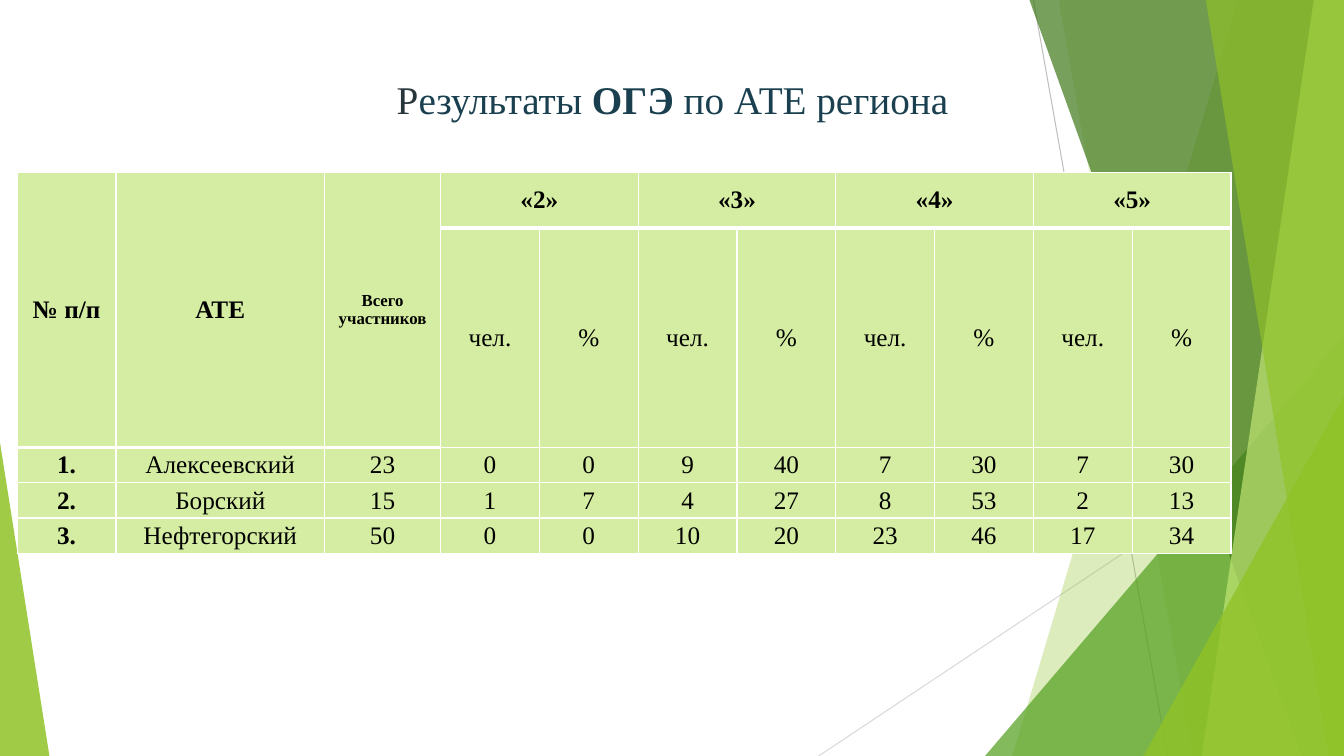
import pptx
import pptx.dml.color
import pptx.enum.shapes
import pptx.enum.text
import pptx.oxml.ns
import pptx.util
from lxml import etree

RGBColor = pptx.dml.color.RGBColor
SHAPE = pptx.enum.shapes.MSO_SHAPE
qn = pptx.oxml.ns.qn

PX = 9144  # EMU in one px, 100 px to the inch
WIDTH, HEIGHT = 1333, 750
FONT = "Times New Roman"

LIME = RGBColor(0x90, 0xC2, 0x26)
PALE_LIME = RGBColor(0xC0, 0xE4, 0x74)
GREEN = RGBColor(0x54, 0xA0, 0x21)
DARK_GREEN = RGBColor(0x3F, 0x78, 0x19)
GREY = RGBColor(0xBF, 0xBF, 0xBF)
LIGHT_GREY = RGBColor(0xD9, 0xD9, 0xD9)
CELL_GREEN = RGBColor(0xD5, 0xED, 0xA2)
SLATE = RGBColor(0x28, 0x36, 0x3C)
TEAL = RGBColor(0x1A, 0x40, 0x50)
BLACK = RGBColor(0, 0, 0)
WHITE = RGBColor(0xFF, 0xFF, 0xFF)

TITLE_RUNS = [
    ("Р", SLATE, False),
    ("езультаты ", TEAL, False),
    ("ОГЭ", TEAL, True),
    (" по АТЕ региона", TEAL, False),
]
LEAD_HEADERS = ["№ п/п", "АТЕ", "Всего участников"]
GRADES = ["«2»", "«3»", "«4»", "«5»"]
RESULTS = [
    ["1.", "Алексеевский", 23, 0, 0, 9, 40, 7, 30, 7, 30],
    ["2.", "Борский", 15, 1, 7, 4, 27, 8, 53, 2, 13],
    ["3.", "Нефтегорский", 50, 0, 0, 10, 20, 23, 46, 17, 34],
]
COLUMN_WIDTHS = [98, 207, 115] + [98] * 8
ROW_HEIGHTS = [55, 218, 35, 35, 35]


def emu(*lengths):
    return [length * PX for length in lengths]


def add_span(para, text, size, color, bold):
    span = para.add_run()
    span.text = text
    span.font.name = FONT
    span.font.size = pptx.util.Pt(size)
    span.font.bold = bold
    span.font.color.rgb = color


def paint(shape, color, opacity):
    """Fill a facet with a see-through colour, without outline or shadow."""
    shape.shadow.inherit = False
    shape.line.fill.background()
    shape.fill.solid()
    shape.fill.fore_color.rgb = color
    color_node = shape.fill._xPr.find(qn("a:solidFill"))[0]
    etree.SubElement(color_node, qn("a:alpha"), val=str(opacity * 1000))


def add_ray(shapes, start, end, color):
    ray = shapes.add_connector(
        pptx.enum.shapes.MSO_CONNECTOR.STRAIGHT, *emu(*start, *end))
    ray.line.color.rgb = color
    ray.line.width = pptx.util.Pt(0.75)
    etree.SubElement(ray.element.spPr, qn("a:effectLst"))


def add_facet(shapes, box, top_x, bottom_x, color, opacity):
    """Fill the box to the right of a slanted edge."""
    left, top, width, height = box
    right, bottom = left + width, top + height
    builder = shapes.build_freeform(left + top_x, top, scale=PX)
    builder.add_line_segments(
        [(right, top), (right, bottom), (left + bottom_x, bottom)], close=True)
    paint(builder.convert_to_shape(), color, opacity)


def add_corner(shapes, box, width, height, on_right, color, opacity):
    """Put a right-angled triangle into a bottom corner of the box."""
    left = box[0] + (box[2] - width if on_right else 0)
    top = box[1] + box[3] - height
    corner = shapes.add_shape(
        SHAPE.ISOSCELES_TRIANGLE, *emu(left, top, width, height))
    corner.adjustments[0] = 1.0 if on_right else 0.0
    paint(corner, color, opacity)


def add_backdrop(shapes, box):
    left, top, width, height = box
    right, bottom = left + width, top + height
    add_ray(shapes, (left + 1025, top), (left + 1158, bottom), GREY)
    add_ray(shapes, (right, top + 403), (left + 812, bottom), LIGHT_GREY)
    add_facet(shapes, box, 1228, 1004, LIME, 30)
    add_facet(shapes, box, 1050, 1183, LIME, 20)
    add_corner(shapes, box, 356, 417, True, GREEN, 72)
    add_facet(shapes, box, 1021, 1291, DARK_GREEN, 70)
    add_facet(shapes, box, 1303, 1192, PALE_LIME, 70)
    add_facet(shapes, box, 1196, 1318, LIME, 65)
    add_corner(shapes, box, 199, 357, True, LIME, 80)
    add_corner(shapes, box, 49, 311, False, LIME, 85)


def place_title(title, box):
    title.left, title.top, title.width, title.height = emu(*box)
    frame = title.text_frame
    frame.word_wrap = True
    frame.auto_size = pptx.enum.text.MSO_AUTO_SIZE.NONE
    frame.vertical_anchor = pptx.enum.text.MSO_ANCHOR.MIDDLE
    para = frame.paragraphs[0]
    para.alignment = pptx.enum.text.PP_ALIGN.CENTER
    properties = para._p.get_or_add_pPr()
    properties.set("marL", str(6 * PX))
    properties.set("indent", "0")
    for text, color, bold in TITLE_RUNS:
        add_span(para, text, 28, color, bold)
    title.element.getparent().append(title.element)  # in front of the backdrop


def format_cell(cell, bottom_width):
    cell.vertical_anchor = pptx.enum.text.MSO_ANCHOR.MIDDLE
    cell.margin_left = cell.margin_right = 7 * PX
    cell.margin_top = cell.margin_bottom = 0
    properties = cell._tc.get_or_add_tcPr()
    for side, points in (("L", 1), ("R", 1), ("T", 1), ("B", bottom_width)):
        border = etree.SubElement(
            properties, qn("a:ln" + side), w=str(pptx.util.Pt(points)))
        fill = etree.SubElement(border, qn("a:solidFill"))
        etree.SubElement(fill, qn("a:srgbClr"), val=str(WHITE))
    cell.fill.solid()
    cell.fill.fore_color.rgb = CELL_GREEN


def write_cell(cell, text, size=18, bold=False):
    para = cell.text_frame.paragraphs[0]
    para.alignment = pptx.enum.text.PP_ALIGN.CENTER
    add_span(para, str(text), size, BLACK, bold)


def add_results(shapes, left, top):
    table = shapes.add_table(
        len(ROW_HEIGHTS), len(COLUMN_WIDTHS),
        *emu(left, top, sum(COLUMN_WIDTHS), sum(ROW_HEIGHTS))).table
    table.first_row = table.horz_banding = False
    for column, width in zip(table.columns, COLUMN_WIDTHS):
        column.width = width * PX
    for row, height in zip(table.rows, ROW_HEIGHTS):
        row.height = height * PX

    lead = len(LEAD_HEADERS)
    for r in range(len(ROW_HEIGHTS)):
        for c in range(len(COLUMN_WIDTHS)):
            ends_header = r == 0 or (r == 1 and c < lead)
            format_cell(table.cell(r, c), 3 if ends_header else 1)

    for c, header in enumerate(LEAD_HEADERS):
        table.cell(0, c).merge(table.cell(1, c))
        write_cell(table.cell(0, c), header, 12 if c == lead - 1 else 18, True)
    for index, grade in enumerate(GRADES):
        c = lead + 2 * index
        table.cell(0, c).merge(table.cell(0, c + 1))
        write_cell(table.cell(0, c), grade, bold=True)
        write_cell(table.cell(1, c), "чел.")
        write_cell(table.cell(1, c + 1), "%")
    for r, values in enumerate(RESULTS, start=2):
        for c, value in enumerate(values):
            write_cell(table.cell(r, c), value, bold=c == 0)


def main():
    deck = pptx.Presentation()
    deck.slide_width, deck.slide_height = emu(WIDTH, HEIGHT)
    page = deck.slides.add_slide(deck.slide_layouts[5])
    add_backdrop(page.shapes, (0, 0, WIDTH, HEIGHT))
    place_title(page.shapes.title, (64, 68, 1200, 60))
    add_results(page.shapes, 17, 171)
    deck.save("out.pptx")


if __name__ == "__main__":
    main()
